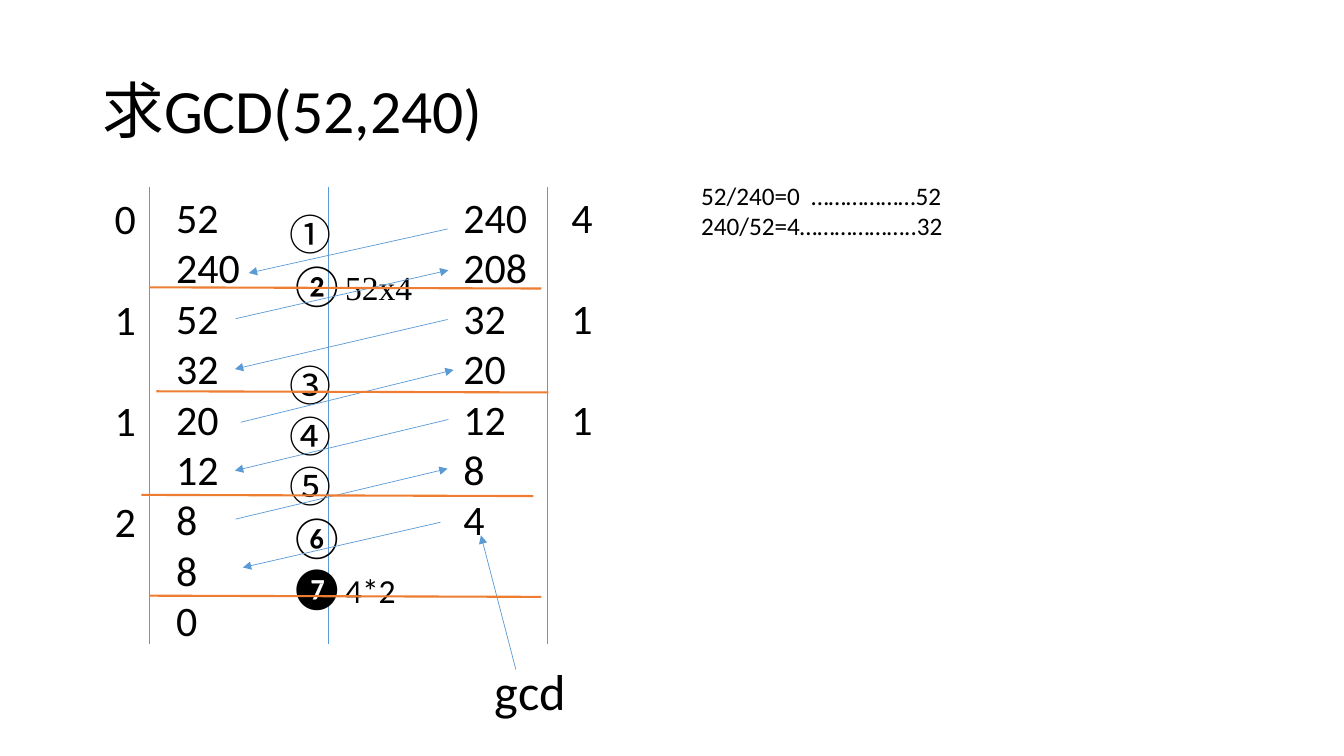
from lxml import etree
from pptx import Presentation
from pptx.dml.color import RGBColor
from pptx.enum import shapes, text
from pptx.oxml.ns import qn
from pptx.util import Cm, Pt

BLACK = RGBColor(0x00, 0x00, 0x00)
BLUE = RGBColor(0x5B, 0x9B, 0xD5)
ORANGE = RGBColor(0xED, 0x7D, 0x31)
BODY_FONT = "Calibri"
SERIF_FONT = "Times New Roman"


class SlideBuilder:
    """Holds the text style and the slide being filled."""

    def __init__(self, presentation, size=30):
        self.size = size
        layout = presentation.slide_layouts.get_by_name("Title Only")
        self.slide = presentation.slides.add_slide(layout)

    def add_run(self, paragraph, content, size=None, font=BODY_FONT):
        run = paragraph.add_run()
        run.text = content
        run.font.size = Pt(size or self.size)
        run.font.name = font
        run.font.color.rgb = BLACK

    def title(self, content, left, top, width, height):
        shape = self.slide.shapes.title
        shape.left, shape.top = Cm(left), Cm(top)
        shape.width, shape.height = Cm(width), Cm(height)
        frame = shape.text_frame
        frame.vertical_anchor = text.MSO_ANCHOR.MIDDLE
        paragraph = frame.paragraphs[0]
        paragraph.alignment = text.PP_ALIGN.LEFT
        paragraph.line_spacing = 0.9
        self.add_run(paragraph, content, 44)

    def text_box(self, lines, left, top, width, height, size=None, gap=0, wrap=True):
        """Each line is a string or a list of (content, size, font) runs."""
        shape = self.slide.shapes.add_textbox(Cm(left), Cm(top), Cm(width), Cm(height))
        frame = shape.text_frame
        frame.word_wrap = wrap
        frame.auto_size = text.MSO_AUTO_SIZE.SHAPE_TO_FIT_TEXT
        for index, line in enumerate(lines):
            paragraph = frame.add_paragraph() if index else frame.paragraphs[0]
            if index and gap:
                paragraph.space_before = Pt(gap)
            runs = [(line, size, BODY_FONT)] if isinstance(line, str) else line
            for run in runs:
                self.add_run(paragraph, *run)

    def line(self, x1, y1, x2, y2, color=BLUE, width=0.5, arrow=False):
        connector = self.slide.shapes.add_connector(
            shapes.MSO_CONNECTOR.STRAIGHT, Cm(x1), Cm(y1), Cm(x2), Cm(y2))
        connector.line.color.rgb = color
        connector.line.width = Pt(width)
        if arrow:
            outline = connector.line._get_or_add_ln()
            etree.SubElement(outline, qn("a:tailEnd"), type="triangle")
        etree.SubElement(connector._element.spPr, qn("a:effectLst"))


def main():
    presentation = Presentation()
    presentation.slide_width, presentation.slide_height = Cm(33.87), Cm(19.05)
    builder = SlideBuilder(presentation)
    builder.title("求GCD(52,240)", 2.33, 1.01, 29.21, 3.68)

    for x in (3.76, 8.28, 13.79):
        builder.line(x, 4.7, x, 16.23)

    builder.text_box("52 240 52 32 20 12 8 8 0".split(), 4.19, 4.7, 2.72, 11.79)
    builder.text_box("240 208 32 20 12 8 4".split(), 11.43, 4.7, 2.21, 9.25)

    # Quotients stand on every second row.
    builder.text_box("0112", 2.64, 4.72, 0.91, 9.25, gap=36.3)
    builder.text_box("411", 14.15, 4.7, 0.91, 6.68, gap=36.3)

    steps = [
        "①　",
        [("②", 30), ("52x4", 24, SERIF_FONT), ("　", 30)],
        "③　",
        "④　",
        "⑤　",
        "⑥",
        [("❼", 30), ("4*2", 24)],
    ]
    builder.text_box(steps, 7.04, 5.13, 4.04, 9.25)

    carry_arrows = [
        (11.28, 5.77, 6.27, 6.88),
        (5.94, 8.03, 11.3, 6.81),
        (11.28, 8.05, 5.92, 9.3),
        (6.07, 10.64, 11.43, 9.32),
        (11.3, 10.57, 5.92, 11.86),
        (5.94, 13.08, 11.28, 11.81),
        (11.1, 13.16, 6.12, 14.3),
    ]
    gcd_arrow = (13, 16.87, 12.12, 13.49)
    for ends in carry_arrows + [gcd_arrow]:
        builder.line(*ends, arrow=True)

    for x, y in ((3.76, 7.24), (3.94, 9.86), (3.56, 12.47), (3.76, 15.01)):
        builder.line(x, y, x + 9.88, y + 0.03, ORANGE, 1.5)

    builder.text_box(["gcd"], 12.22, 16.51, 2.34, 1.8, size=36, wrap=False)
    divisions = ["52/240=0  ………………52", "240/52=4………………..32"]
    builder.text_box(divisions, 17.42, 4.42, 9.3, 1.8, size=18)

    presentation.save("out.pptx")


if __name__ == "__main__":
    main()
